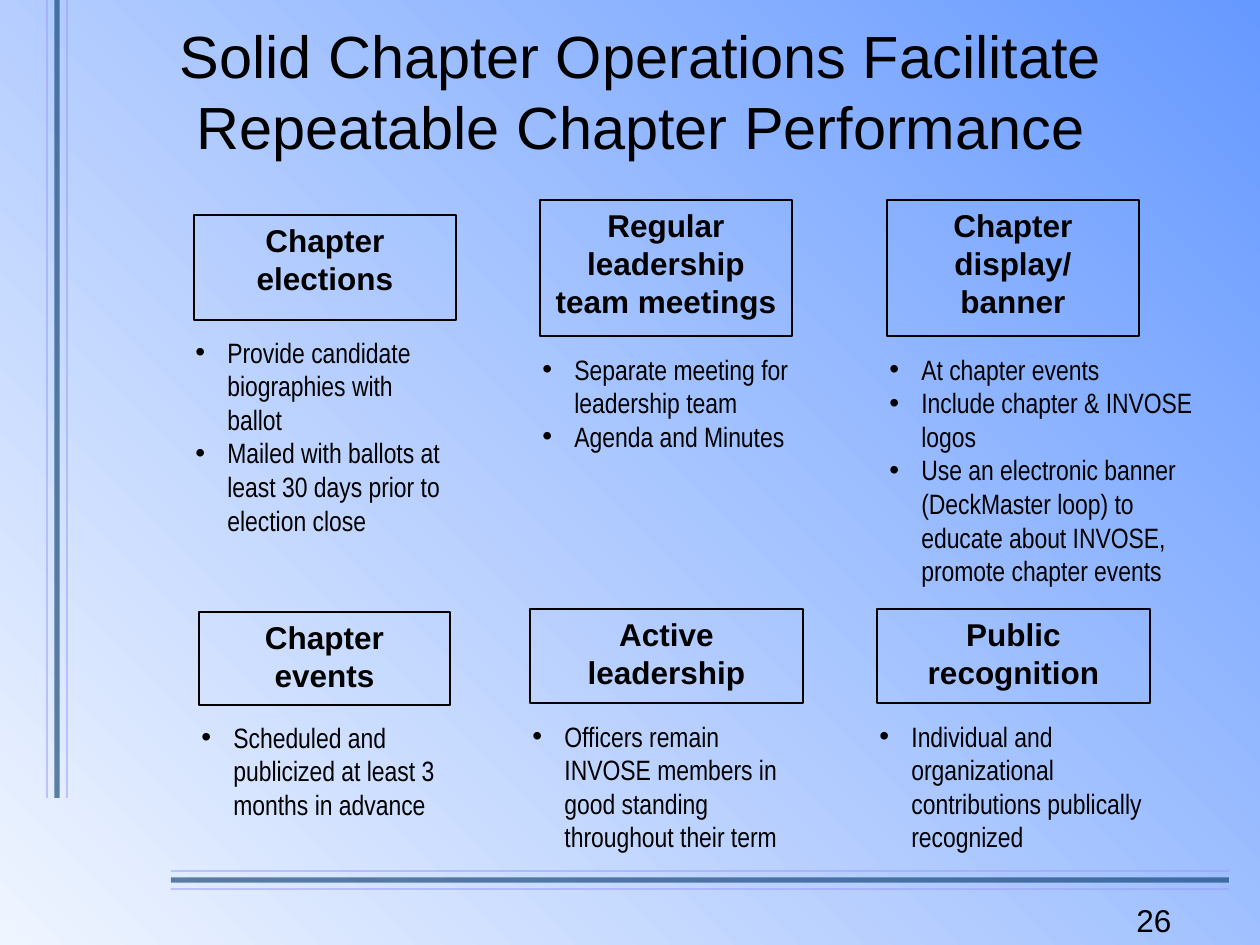
from pptx import Presentation
from pptx.dml.color import RGBColor
from pptx.enum.shapes import MSO_CONNECTOR as Conn, MSO_SHAPE as Kind
from pptx.enum.text import MSO_ANCHOR as Anchor, PP_ALIGN as Align
from pptx.oxml.ns import qn
from pptx.util import Pt
from lxml.etree import SubElement as Sub

SCALE = 914400 / 126
INK = "000000"
TITLE = {"name": "Arial", "size": Pt(34)}
HEAD = {"name": "Arial", "size": Pt(18), "bold": True}
ITEM = {"name": "Arial Narrow", "size": Pt(16)}
PAGE = {"name": "Arial", "size": Pt(18)}
RULES = [(-9, "9999FF", 1, 50), (9, "9999FF", 1, 50), (0, "003366", 3, 60)]
TOPICS = [
    ((194, 215, 262, 105), "Chapter elections", (183, 329, 273, 217),
     ["Provide candidate biographies with ballot",
      "Mailed with ballots at least 30 days prior to election close"]),
    ((540, 200, 252, 136), "Regular leadership team meetings", (530, 346, 273, 115),
     ["Separate meeting for leadership team", "Agenda and Minutes"]),
    ((887, 200, 252, 136), "Chapter display/ banner", (877, 346, 341, 251),
     ["At chapter events", "Include chapter & INVOSE logos",
      "Use an electronic banner (DeckMaster loop) to educate about INVOSE, promote chapter events"]),
    ((199, 612, 251, 93), "Chapter events", (189, 714, 273, 113),
     ["Scheduled and publicized at least 3 months in advance"]),
    ((530, 609, 273, 94), "Active leadership", (520, 713, 294, 147),
     ["Officers remain INVOSE members in good standing throughout their term"]),
    ((877, 609, 273, 94), "Public recognition", (867, 713, 294, 147),
     ["Individual and organizational contributions publically recognized"]),
]


def px(*vals):
    """Turn pixel lengths into EMU."""
    return [round(v * SCALE) for v in vals]


def rgb(code):
    """Turn a hex string into a colour."""
    return RGBColor.from_string(code)


class Deck:
    """Hold the style and the current slide."""

    def __init__(self):
        """Start a file with one blank slide."""
        self.file = Presentation()
        self.file.slide_width, self.file.slide_height = px(1260, 945)
        self.slide = self.file.slides.add_slide(self.file.slide_layouts[6])
        self.shapes = self.slide.shapes

    def back(self, *codes):
        """Fill the background from bottom left to top right."""
        fill = self.slide.background.fill
        fill.gradient()
        fill.gradient_angle = 45
        for stop, code in zip(fill.gradient_stops, codes):
            stop.color.rgb = rgb(code)

    def rule(self, ends, code, width, alpha):
        """Draw a see-through straight line."""
        line = self.shapes.add_connector(Conn.STRAIGHT, *px(*ends))
        line.line.width = Pt(width)
        line.line.color.rgb = rgb(code)
        props = line._element.spPr
        tint = props.find(".//" + qn("a:srgbClr"))
        Sub(tint, qn("a:alpha"), val=str(alpha * 1000))
        Sub(props, qn("a:effectLst"))

    def words(self, shape, texts, font, align=Align.LEFT, anchor=Anchor.TOP, mark=None):
        """Put paragraphs into a shape."""
        frame = shape.text_frame
        frame.word_wrap = True
        frame.vertical_anchor = anchor
        frame.text = "\n".join(texts)
        for para in frame.paragraphs:
            para.alignment = align
            if mark:
                self.bullet(para, mark)
            for key, val in font.items():
                setattr(para.font, key, val)
            para.font.color.rgb = rgb(INK)

    def bullet(self, para, mark):
        """Give a paragraph a hanging bullet."""
        props = para._p.get_or_add_pPr()
        gap = px(32)[0]
        props.set("marL", str(gap))
        props.set("indent", str(-gap))
        Sub(props, qn("a:buFont"), typeface="Arial")
        Sub(props, qn("a:buChar"), char=mark)

    def text(self, area, texts, font, **opts):
        """Add a text box."""
        self.words(self.shapes.add_textbox(*px(*area)), texts, font, **opts)

    def box(self, area, label):
        """Add an outlined heading box."""
        shape = self.shapes.add_shape(Kind.RECTANGLE, *px(*area))
        shape.shadow.inherit = False
        shape.fill.background()
        shape.line.color.rgb = rgb(INK)
        shape.line.width = Pt(0.75)
        self.words(shape, [label], HEAD, align=Align.CENTER)


def main():
    """Build the slide."""
    deck = Deck()
    deck.back("EFF5FF", "6699FF")
    for gap, *look in RULES:
        x = 57 + (gap * 10) // 9
        deck.rule((x, 0, x, 798), *look)
    for gap, *look in RULES:
        y = 880 + gap
        deck.rule((1229, y, 171, y), *look)
    deck.text((1124, 895, 84, 50), ["26"], PAGE)
    deck.text((63, 84, 1155, 84),
              ["Solid Chapter Operations Facilitate Repeatable Chapter Performance"],
              TITLE, align=Align.CENTER, anchor=Anchor.BOTTOM)
    for area, label, place, items in TOPICS:
        deck.box(area, label)
        deck.text(place, items, ITEM, mark="•")
    deck.file.save("out.pptx")


if __name__ == "__main__":
    main()
